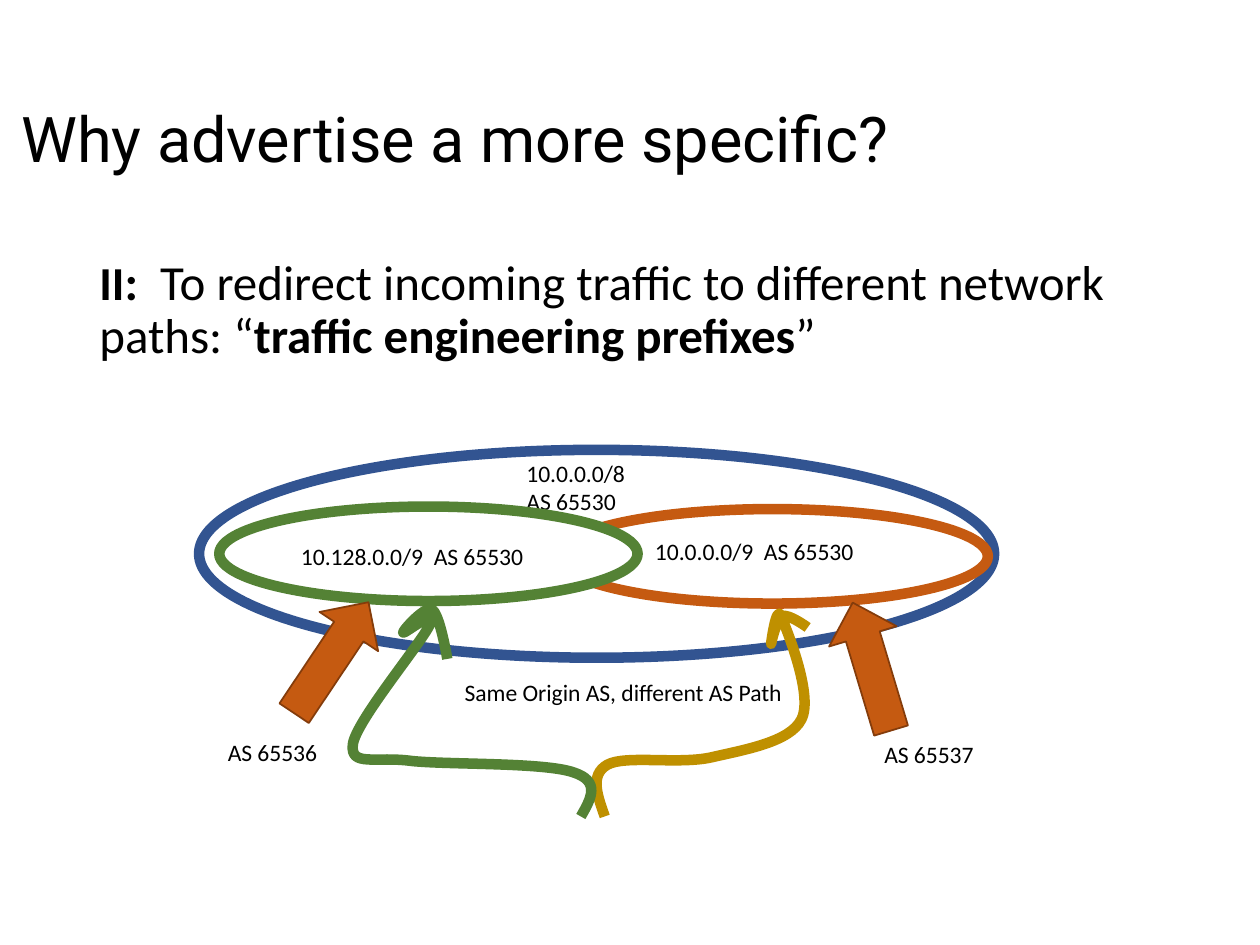
from lxml import etree
from pptx import Presentation, util as u
from pptx.dml.color import RGBColor
from pptx.enum import shapes, text
from pptx.oxml import ns

BLACK, WHITE = "000000", "FFFFFF"
BLUE, ORANGE, GREEN, GOLD, BROWN = "325491", "C55A11", "548235", "BF9000", "843C0B"

GOLD_CURVE = [
    (3.22, 2.91), (3.16, 2.74), (3.1, 2.58), (3.24, 2.5), (3.38, 2.42), (3.81, 2.5),
    (4.07, 2.44), (4.33, 2.38), (4.69, 2.32), (4.78, 2.14), (4.88, 1.95), (4.66, 1.42),
    (4.62, 1.32), (4.58, 1.22), (4.54, 1.54), (4.54, 1.54), (4.54, 1.54), (4.58, 1.34),
    (4.63, 1.32), (4.68, 1.3), (4.83, 1.41), (4.83, 1.41),
]
GREEN_CURVE = [
    (3.03, 2.91), (3.11, 2.77), (3.19, 2.63), (2.97, 2.56), (2.74, 2.48), (1.98, 2.5),
    (1.69, 2.47), (1.4, 2.43), (1.2, 2.52), (1.22, 2.34), (1.24, 2.16), (1.76, 1.54),
    (1.83, 1.39), (1.9, 1.24), (1.62, 1.47), (1.62, 1.45), (1.62, 1.43), (1.8, 1.23),
    (1.85, 1.27), (1.91, 1.3), (1.97, 1.66), (1.97, 1.66),
]


def color(value):
    return RGBColor.from_string(value)


def inches(values):
    return [u.Inches(value) for value in values]


def shifted(box, part):
    return (box[0] + part[0], box[1] + part[1], *part[2:])


def set_all(target, values):
    for name, value in values.items():
        setattr(target, name, value)


def add_text(slide, box, paragraphs, frame_format=None, paragraph_format=None):
    frame = slide.shapes.add_textbox(*inches(box)).text_frame
    set_all(frame, {"word_wrap": True, **(frame_format or {})})
    for index, runs in enumerate(paragraphs):
        paragraph = frame.add_paragraph() if index else frame.paragraphs[0]
        set_all(paragraph, paragraph_format or {})
        for content, font_format in runs:
            run = paragraph.add_run()
            run.text = content
            set_all(run.font, {"name": "Calibri", **font_format})
            run.font.color.rgb = color(BLACK)


def add_label(slide, box, lines, wrap=False):
    paragraphs = [[(line, {"size": u.Pt(13.5)})] for line in lines]
    add_text(slide, box, paragraphs,
             {"word_wrap": wrap, "auto_size": text.MSO_AUTO_SIZE.SHAPE_TO_FIT_TEXT})


def style(shape, line, width, fill=None):
    shape.shadow.inherit = False
    if fill:
        shape.fill.solid()
        shape.fill.fore_color.rgb = color(fill)
    else:
        shape.fill.background()
    shape.line.color.rgb = color(line)
    shape.line.width = u.Pt(width)


def add_ellipse(slide, box, line):
    style(slide.shapes.add_shape(shapes.MSO_SHAPE.OVAL, *inches(box)), line, 6, WHITE)


def add_block_arrow(slide, box, rotation):
    arrow = slide.shapes.add_shape(shapes.MSO_SHAPE.RIGHT_ARROW, *inches(box))
    arrow.rotation = rotation
    style(arrow, BROWN, 1, ORANGE)


def add_curve(slide, origin, bounds, controls, line):
    points = [inches(shifted(origin, point)) for point in controls]
    left, top, width, height = inches(shifted(origin, bounds))
    builder = slide.shapes.build_freeform(*points[0])
    builder.add_line_segments(points[3::3], close=False)
    shape = builder.convert_to_shape()
    set_all(shape, {"left": left, "top": top, "width": width, "height": height})
    outline = next(shape.element.iter(ns.qn("a:path")))
    outline.set("w", str(width))
    outline.set("h", str(height))
    for command in list(outline):
        outline.remove(command)
    start = etree.SubElement(outline, ns.qn("a:moveTo"))
    curves = [etree.SubElement(outline, ns.qn("a:cubicBezTo")) for _ in points[3::3]]
    for index, (x, y) in enumerate(points):
        command = curves[(index - 1) // 3] if index else start
        etree.SubElement(command, ns.qn("a:pt"), x=str(x - left), y=str(y - top))
    style(shape, line, 6)


def add_title(slide, box):
    runs = [("Why advertise a more specific?", {"name": "Roboto", "size": u.Pt(36)})]
    add_text(slide, box, [runs], {"vertical_anchor": text.MSO_ANCHOR.MIDDLE},
             {"line_spacing": 0.9})


def add_body(slide, box):
    size = u.Pt(28)
    runs = [
        ("II", {"size": u.Pt(27), "bold": True}),
        (": ", {"size": size, "bold": True}),
        (" To redirect incoming traffic to different network paths: “", {"size": size}),
        ("traffic engineering prefixes", {"size": size, "bold": True}),
        ("”", {"size": size}),
    ]
    add_text(slide, box, [runs], None, {"line_spacing": 0.9, "space_before": u.Pt(10)})


def add_diagram(slide, box):
    def place(*part):
        return shifted(box, part)

    add_ellipse(slide, place(0, 0, 6.31, 1.65), BLUE)
    add_label(slide, place(2.5, 0.02, 1, 0.56), ["10.0.0.0/8", "AS 65530"])
    add_ellipse(slide, place(2.84, 0.47, 3.42, 0.75), ORANGE)
    add_label(slide, place(3.52, 0.64, 1.8, 0.33), ["10.0.0.0/9  AS 65530"])
    add_block_arrow(slide, place(4.81, 1.44, 1.06, 0.56), 253.3)
    add_ellipse(slide, place(0.16, 0.45, 3.32, 0.75), GREEN)
    add_block_arrow(slide, place(0.52, 1.37, 1.06, 0.56), 303.8)
    add_label(slide, place(0.71, 0.68, 1.99, 0.33), ["10.128.0.0/9  AS 65530"])
    add_label(slide, place(0.13, 2.24, 1.13, 0.33), ["AS 65536"], True)
    add_label(slide, place(5.34, 2.25, 1.13, 0.33), ["AS 65537"], True)
    add_curve(slide, box, (3.15, 1.3, 1.68, 1.61), GOLD_CURVE, GOLD)
    add_curve(slide, box, (1.22, 1.27, 1.89, 1.64), GREEN_CURVE, GREEN)
    add_label(slide, place(2.01, 1.76, 2.76, 0.33), ["Same Origin AS, different AS Path"])


def main():
    presentation = Presentation()
    set_all(presentation, {"slide_width": u.Inches(10), "slide_height": u.Inches(7.5)})
    slide = presentation.slides.add_slide(presentation.slide_layouts[6])
    add_title(slide, (0.07, 0.4, 10.4, 1.45))
    add_body(slide, (0.69, 2, 8.62, 4.76))
    add_diagram(slide, (1.58, 3.57))
    presentation.save("out.pptx")


if __name__ == "__main__":
    main()
